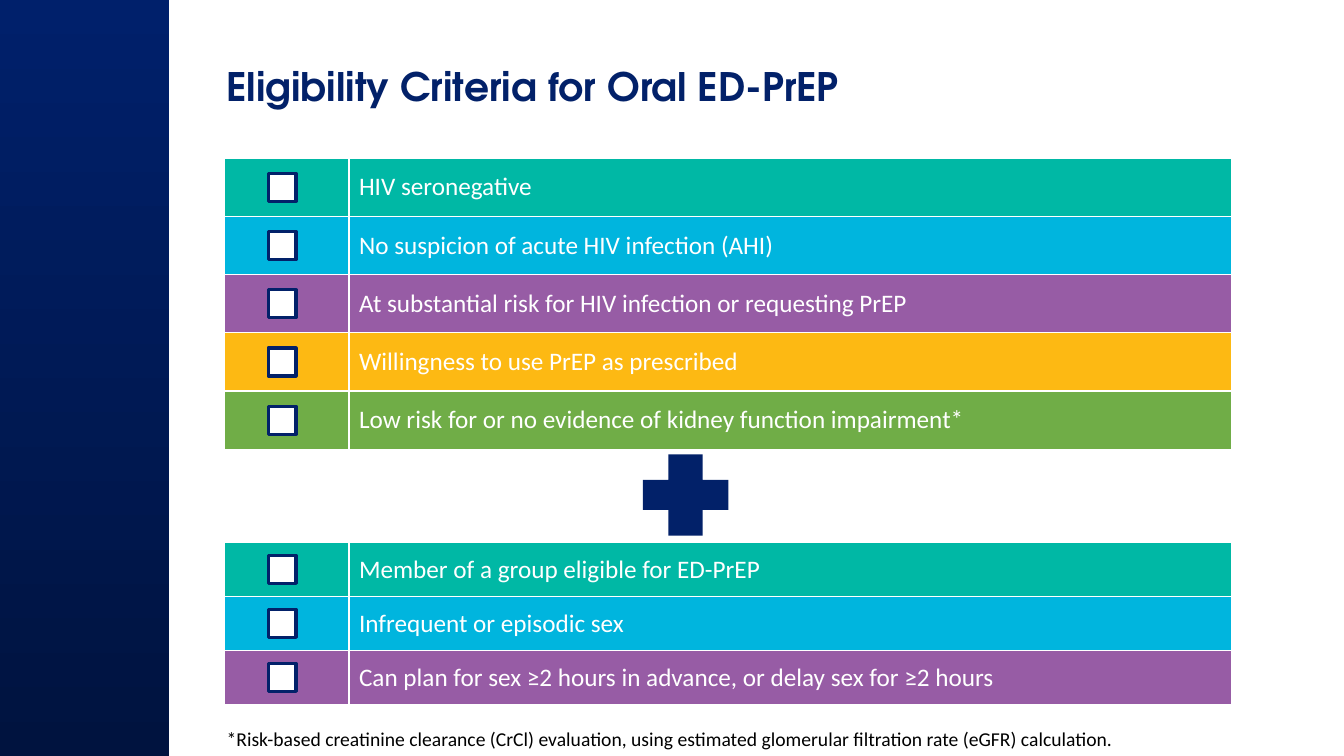
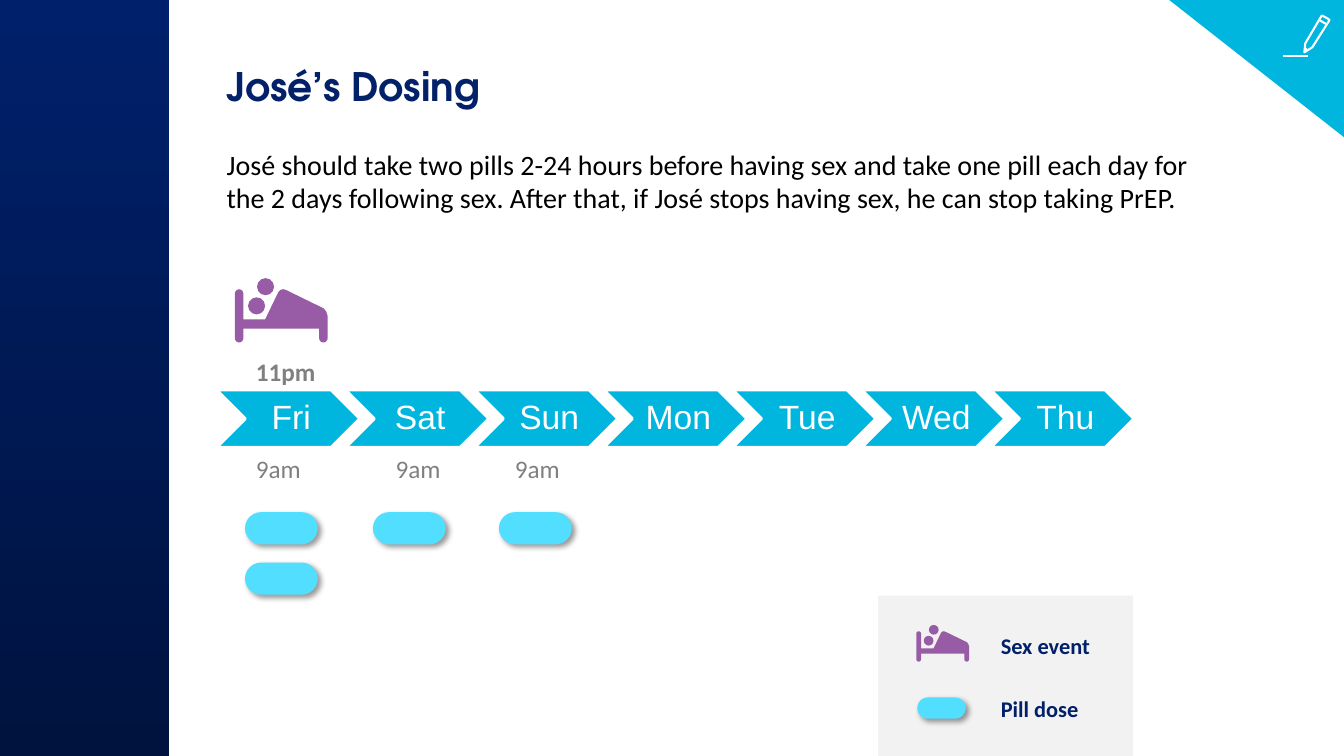
from math import cos, pi, sin

from lxml import etree
from pptx import Presentation
from pptx.dml.color import RGBColor
from pptx.enum.shapes import MSO_CONNECTOR, MSO_SHAPE
from pptx.enum.text import MSO_ANCHOR, PP_ALIGN
from pptx.oxml import parse_xml
from pptx.oxml.ns import nsdecls, qn
from pptx.util import Pt

RECTANGLE = MSO_SHAPE.RECTANGLE
PILL = MSO_SHAPE.ROUNDED_RECTANGLE
OVAL = MSO_SHAPE.OVAL
CHEVRON = MSO_SHAPE.CHEVRON
PLUS = MSO_SHAPE.CROSS
RIGHT_TRIANGLE = MSO_SHAPE.RIGHT_TRIANGLE
STRAIGHT = MSO_CONNECTOR.STRAIGHT
MIDDLE = MSO_ANCHOR.MIDDLE
CENTER = PP_ALIGN.CENTER

NAVY = "022169"
LEGEND_NAVY = "022069"
TEAL = "00B8A5"
BLUE = "00B5DE"
PURPLE = "975CA5"
YELLOW = "FDB913"
GREEN = "70AD47"
PILL_BLUE = "52DFFF"
GRAY = "808080"
LIGHT_GRAY = "F2F2F2"
WHITE = "FFFFFF"
BLACK = "000000"

TITLE_FONT = "TeX Gyre Adventor"
BODY_FONT = "Calibri"
DAY_FONT = "Arial"

color = RGBColor.from_string


def style_shape(shape, fill=None, line=None, line_width=1):
    shape.shadow.inherit = False
    if fill:
        shape.fill.solid()
        shape.fill.fore_color.rgb = color(fill)
    else:
        shape.fill.background()
    if line:
        shape.line.color.rgb = color(line)
        shape.line.width = Pt(line_width)
    else:
        shape.line.fill.background()


def add_text(slide, box, text, size, text_color, bold=False, font=BODY_FONT):
    text_box = slide.shapes.add_textbox(*map(Pt, box))
    text_box.text_frame.word_wrap = True
    text_box.text_frame.text = text
    run = text_box.text_frame.paragraphs[0].runs[0]
    run.font.name = font
    run.font.size = Pt(size)
    run.font.bold = bold
    run.font.color.rgb = color(text_color)


presentation = Presentation()
presentation.slide_width = Pt(960)
presentation.slide_height = Pt(540)

# Shared band and title
slides = []
for title in ("Eligibility Criteria for Oral ED-PrEP", "José’s Dosing"):
    slide = presentation.slides.add_slide(presentation.slide_layouts[6])
    band = slide.shapes.add_shape(RECTANGLE, 0, 0, Pt(121), Pt(540))
    style_shape(band)
    band.fill.gradient()
    band.fill.gradient_angle = 90
    for stop, stop_color in zip(band.fill.gradient_stops, ("00133F", "00206B")):
        stop.color.rgb = color(stop_color)
    add_text(slide, (154.8, 41, 720, 66), title, 28, NAVY, True, TITLE_FONT)
    slides.append(slide)
criteria_slide, dosing_slide = slides

# Criteria tables with a checkbox centred in each row
general_criteria = [
    ("HIV seronegative", TEAL),
    ("No suspicion of acute HIV infection (AHI)", BLUE),
    ("At substantial risk for HIV infection or requesting PrEP", PURPLE),
    ("Willingness to use PrEP as prescribed", YELLOW),
    ("Low risk for or no evidence of kidney function impairment*", GREEN),
]
dosing_criteria = [
    ("Member of a group eligible for ED-PrEP", TEAL),
    ("Infrequent or episodic sex", BLUE),
    ("Can plan for sex ≥2 hours in advance, or delay sex for ≥2 hours", PURPLE),
]
CHECKBOX = 20
for top, row_height, criteria in ((113, 41.6, general_criteria),
                                  (387.4, 38.6, dosing_criteria)):
    table = criteria_slide.shapes.add_table(
        len(criteria), 2, Pt(160), Pt(top), Pt(720), Pt(row_height * len(criteria))).table
    table.first_row = False
    table.horz_banding = False
    table.columns[0].width = Pt(89.3)
    table.columns[1].width = Pt(630.7)
    for index, (criterion, row_color) in enumerate(criteria):
        table.rows[index].height = Pt(row_height)
        for cell in table.rows[index].cells:
            for side in ("lnL", "lnR", "lnT", "lnB"):
                cell._tc.get_or_add_tcPr().append(parse_xml(
                    f'<a:{side} {nsdecls("a")} w="12700"><a:solidFill>'
                    f'<a:srgbClr val="{WHITE}"/></a:solidFill></a:{side}>'))
            cell.fill.solid()
            cell.fill.fore_color.rgb = color(row_color)
            cell.vertical_anchor = MIDDLE
        cell = table.cell(index, 1)
        cell.text_frame.text = criterion
        font = cell.text_frame.paragraphs[0].runs[0].font
        font.name = BODY_FONT
        font.size = Pt(18)
        font.color.rgb = color(WHITE)
        checkbox_top = top + row_height * (index + 0.5) - CHECKBOX / 2
        checkbox = criteria_slide.shapes.add_shape(
            RECTANGLE, Pt(191.5), Pt(checkbox_top), Pt(CHECKBOX), Pt(CHECKBOX))
        style_shape(checkbox, WHITE, NAVY, 2.25)

# Plus sign and footnote
plus = criteria_slide.shapes.add_shape(PLUS, Pt(459.2), Pt(324.6), Pt(61), Pt(58))
plus.adjustments[0] = 0.315
style_shape(plus, NAVY)
add_text(criteria_slide, (154.8, 515.5, 726, 24.5),
         "*Risk-based creatinine clearance (CrCl) evaluation, using estimated "
         "glomerular filtration rate (eGFR) calculation.", 14, BLACK)

# Dosing instructions
add_text(dosing_slide, (154.8, 101.5, 720, 55.5),
         "José should take two pills 2-24 hours before having sex and take one pill "
         "each day for the 2 days following sex. After that, if José stops having sex, "
         "he can stop taking PrEP.", 20, BLACK)

# Week of chevrons
for index, day in enumerate(("Fri", "Sat", "Sun", "Mon", "Tue", "Wed", "Thu")):
    chevron = dosing_slide.shapes.add_shape(
        CHEVRON, Pt(154.8 + 92.16 * index), Pt(278.6), Pt(102.2), Pt(41))
    style_shape(chevron, BLUE, WHITE, 2)
    frame = chevron.text_frame
    frame.word_wrap = False
    frame.vertical_anchor = MIDDLE
    frame.margin_left = Pt(7.2)
    frame.margin_right = frame.margin_top = frame.margin_bottom = Pt(2.9)
    frame.text = day
    paragraph = frame.paragraphs[0]
    paragraph.alignment = CENTER
    paragraph.line_spacing = 0.9
    font = paragraph.runs[0].font
    font.name = DAY_FONT
    font.size = Pt(24)
    font.color.rgb = color(WHITE)

# Times of the event and the doses
add_text(dosing_slide, (175.7, 251.3, 65.5, 29), "11pm", 18, GRAY, True)
for left in (175.7, 275.5, 360.7):
    add_text(dosing_slide, (left, 320.6, 60, 29), "9am", 18, GRAY)

# Legend
legend = dosing_slide.shapes.add_shape(RECTANGLE, Pt(627.2), Pt(425.5), Pt(182.3), Pt(114.5))
style_shape(legend, LIGHT_GRAY)
for top, label in ((447.8, "Sex event"), (493.2, "Pill dose")):
    add_text(dosing_slide, (707.8, top, 90, 26.6), label, 16, LEGEND_NAVY, True)

# Pills on the timeline and in the legend
for box in ((175, 365.8, 52, 23), (175, 401.8, 52, 23), (266.4, 365.8, 52, 23),
            (356.4, 365.8, 52, 23), (655.2, 498.2, 34.6, 15.2)):
    pill = dosing_slide.shapes.add_shape(PILL, *map(Pt, box))
    pill.adjustments[0] = 0.5
    style_shape(pill, PILL_BLUE)
    pill._element.spPr.find(qn("a:effectLst")).append(parse_xml(
        f'<a:outerShdw {nsdecls("a")} blurRad="{Pt(4)}" dist="{Pt(3)}" dir="2700000" '
        f'algn="tl" rotWithShape="0"><a:srgbClr val="{BLACK}">'
        f'<a:alpha val="40000"/></a:srgbClr></a:outerShdw>'))

# Bed icons: frame and blanket as one outline, with rounded post ends
arc = [(3 * cos(pi * step / 8), 3 * sin(pi * step / 8)) for step in range(9)]
bed_outline = (
    [(21.6, 29.5), (6, 29.5)]
    + [(3 + x, 11 - y) for x, y in arc]
    + [(3 - x, 43 + y) for x, y in arc]
    + [(6, 36), (60.2, 36)]
    + [(63.2 - x, 43 + y) for x, y in arc]
    + [(66.2, 27), (65.3, 24), (63.4, 21.6), (36.7, 8.6), (34.6, 7.9), (32.5, 8.4), (31, 10)]
)
hundredths = [(x * 100, y * 100) for x, y in bed_outline]
for left, top, scale in ((167.8, 198.7, 1), (654.5, 446.4, 0.57)):
    bed = dosing_slide.shapes.add_group_shape()
    builder = bed.shapes.build_freeform(*hundredths[0], scale=Pt(scale) / 100)
    builder.add_line_segments(hundredths[1:], close=True)
    style_shape(builder.convert_to_shape(Pt(left), Pt(top)), PURPLE)
    for x, y in ((9.4, 13.7), (15.8, 0)):
        head = bed.shapes.add_shape(OVAL, Pt(left + x * scale), Pt(top + y * scale),
                                    Pt(12.2 * scale), Pt(12.2 * scale))
        style_shape(head, PURPLE)

# Corner with pencil
corner = dosing_slide.shapes.add_shape(RIGHT_TRIANGLE, Pt(835.2), 0, Pt(124.8), Pt(98))
corner.rotation = 180
style_shape(corner, BLUE)
pencil_outline = [(9374, 338), (9317, 374), (9324, 310), (9439, 115),
                  (9446, 112), (9490, 137), (9497, 144)]
builder = dosing_slide.shapes.build_freeform(*pencil_outline[0], scale=Pt(1) / 10)
builder.add_line_segments(pencil_outline[1:], close=True)
style_shape(builder.convert_to_shape(0, 0), None, WHITE, 1.5)
for ends in ((942.5, 14.4, 947.5, 17.3), (932.4, 34.6, 933.8, 36), (916.6, 40.3, 934.6, 40.3)):
    stroke = dosing_slide.shapes.add_connector(STRAIGHT, *map(Pt, ends))
    stroke.line.color.rgb = color(WHITE)
    stroke.line.width = Pt(1.5)
    etree.SubElement(stroke._element.spPr, qn("a:effectLst"))

presentation.save("out.pptx")
